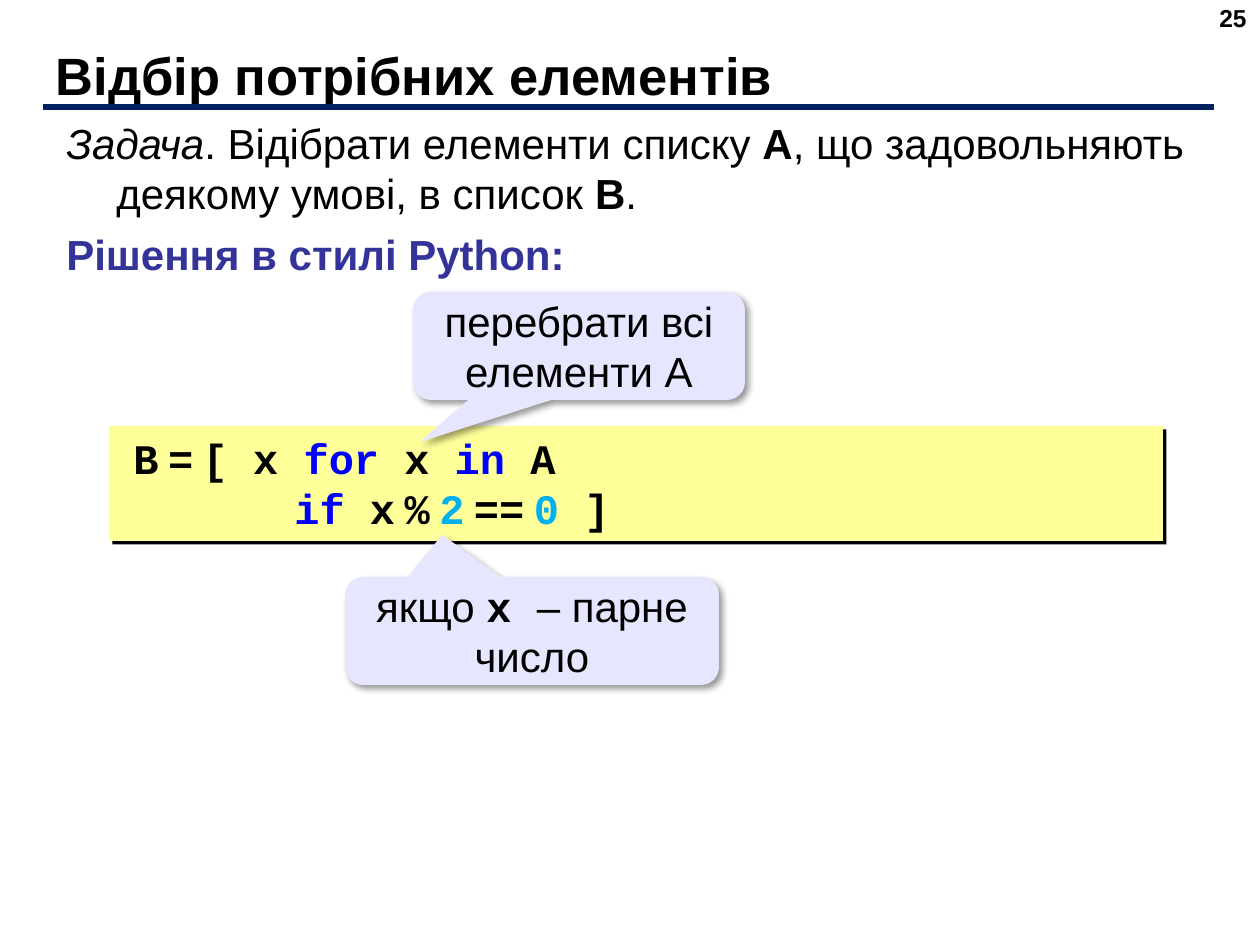
"""Build a slide about selecting list elements in Python style."""
from dataclasses import dataclass

from lxml.etree import SubElement
from pptx import Presentation
from pptx.dml.color import RGBColor
from pptx.enum.shapes import MSO_CONNECTOR, MSO_SHAPE
from pptx.enum.text import MSO_ANCHOR, MSO_AUTO_SIZE, PP_ALIGN
from pptx.oxml.ns import qn
from pptx.util import Pt

SCALE = 914400 // 126
BLACK, INDIGO, NAVY = "000000", "333399", "002060"
BLUE, CYAN, YELLOW, LAVENDER = "0000FF", "00B0F0", "FFFF99", "E6E6FF"


@dataclass(frozen=True)
class Span:
    """A run of text with one format."""
    text: str
    color: str = BLACK
    bold: bool = False
    italic: bool = False
    font: str = "Arial"
    size: int = 24


@dataclass(frozen=True)
class Line:
    """A paragraph with its alignment and indents in px."""
    spans: list[Span]
    align: PP_ALIGN = PP_ALIGN.LEFT
    margin: int = 0
    indent: int = 0


@dataclass(frozen=True)
class Area:
    """A rectangle in px."""
    left: int
    top: int
    width: int
    height: int


@dataclass(frozen=True)
class Shadow:
    """An outer shadow, opacity in percent and lengths in points."""
    opacity: int
    blur: float
    distance: float


@dataclass(frozen=True)
class Callout:
    """A speech bubble with the position of its tip."""
    area: Area
    tip: tuple[float, float]
    spans: list[Span]


def px(length: int) -> int:
    """Turn px into EMU."""
    return length * SCALE


def rgb(value: str) -> RGBColor:
    """Turn a hex string into a colour."""
    return RGBColor.from_string(value)


def place(area: Area) -> tuple[int, int, int, int]:
    """Give an area in EMU."""
    return px(area.left), px(area.top), px(area.width), px(area.height)


def code(text: str, color: str = BLACK) -> Span:
    """Make a bold monospaced span."""
    return Span(text, color, bold=True, font="Courier New")


def write(shape, lines: list[Line], anchor: MSO_ANCHOR = MSO_ANCHOR.TOP,
          wrap: bool = True) -> None:
    """Fill a shape with paragraphs, run by run."""
    frame = shape.text_frame
    frame.auto_size = MSO_AUTO_SIZE.NONE
    frame.word_wrap = wrap
    frame.vertical_anchor = anchor
    for index, line in enumerate(lines):
        para = frame.add_paragraph() if index else frame.paragraphs[0]
        para.alignment = line.align
        properties = para._p.get_or_add_pPr()
        properties.set("marL", str(px(line.margin)))
        properties.set("indent", str(px(line.indent)))
        for span in line.spans:
            run = para.add_run()
            run.text = span.text
            font = run.font
            font.name, font.size = span.font, Pt(span.size)
            font.bold, font.italic = span.bold, span.italic
            font.color.rgb = rgb(span.color)


def add_text(page, area: Area, line: Line, wrap: bool = True) -> None:
    """Add a text box with one paragraph."""
    write(page.shapes.add_textbox(*place(area)), [line], wrap=wrap)


def add_panel(page, kind: MSO_SHAPE, area: Area, color: str, shadow: Shadow):
    """Add a filled shape that casts a shadow to the lower right."""
    shape = page.shapes.add_shape(kind, *place(area))
    shape.fill.solid()
    shape.fill.fore_color.rgb = rgb(color)
    shape.line.fill.background()
    shape.shadow.inherit = False
    effects = shape._element.spPr.find(qn("a:effectLst"))
    outer = SubElement(effects, qn("a:outerShdw"), blurRad=str(Pt(shadow.blur)),
                       dist=str(Pt(shadow.distance)), dir="2700000", algn="tl",
                       rotWithShape="0")
    shade = SubElement(outer, qn("a:srgbClr"), val=BLACK)
    SubElement(shade, qn("a:alpha"), val=str(shadow.opacity * 1000))
    return shape


def add_callout(page, callout: Callout) -> None:
    """Add a rounded speech bubble."""
    shape = add_panel(page, MSO_SHAPE.ROUNDED_RECTANGULAR_CALLOUT, callout.area,
                      LAVENDER, Shadow(40, 4, 3))
    shape.adjustments[0], shape.adjustments[1] = callout.tip
    write(shape, [Line(callout.spans, PP_ALIGN.CENTER)], MSO_ANCHOR.MIDDLE)


def add_rule(page, left: int, right: int, top: int) -> None:
    """Add the line under the title."""
    rule = page.shapes.add_connector(MSO_CONNECTOR.STRAIGHT, px(left), px(top),
                                     px(right), px(top))
    rule.line.color.rgb = rgb(NAVY)
    rule.line.width = Pt(3)
    SubElement(rule._element.spPr, qn("a:effectLst"))


def main() -> None:
    """Build and save the deck."""
    deck = Presentation()
    deck.slide_width, deck.slide_height = px(1260), px(945)
    page = deck.slides.add_slide(deck.slide_layouts[5])

    title = page.shapes.title
    title.left, title.top, title.width, title.height = place(Area(43, 42, 1154, 66))
    write(title, [Line([Span("Відбір потрібних елементів", bold=True, size=30)])],
          MSO_ANCHOR.MIDDLE)
    add_text(page, Area(965, -3, 294, 66),
             Line([Span("25", bold=True, size=14)], PP_ALIGN.RIGHT))
    add_text(page, Area(54, 222, 528, 63),
             Line([Span("Рішення в стилі Python:", INDIGO, bold=True)],
                  margin=24, indent=-24), wrap=False)
    add_text(page, Area(54, 111, 1169, 115), Line([
        Span("Задача", italic=True),
        Span(". Відібрати елементи списку "),
        Span("A", bold=True),
        Span(", що задовольняють деякому умові, в список "),
        Span("B", bold=True),
        Span("."),
    ], margin=50, indent=-50))

    thin = Span(" ", bold=True, font="Calibri")
    listing = add_panel(page, MSO_SHAPE.RECTANGLE, Area(109, 426, 1054, 115),
                        YELLOW, Shadow(100, 0, 2.8))
    write(listing, [
        Line([code("B"), thin, code("="), thin, code("[ x "), code("for", BLUE),
              code(" x "), code("in", BLUE), code(" A")],
             margin=25, indent=-13),
        Line([code("if", BLUE), code(" x"), thin, code("%"), thin, code("2", CYAN),
              thin, code("=="), thin, code("0", CYAN), code(" ]")],
             margin=173),
    ])

    callouts = [
        Callout(Area(345, 577, 374, 108), (-0.24, -0.89),
                [Span("якщо "), code("x "), Span("– парне число")]),
        Callout(Area(413, 292, 332, 108), (-0.48, 0.89),
                [Span("перебрати всі елементи A")]),
    ]
    for callout in callouts:
        add_callout(page, callout)
    add_rule(page, 43, 1214, 107)
    deck.save("out.pptx")


if __name__ == "__main__":
    main()
